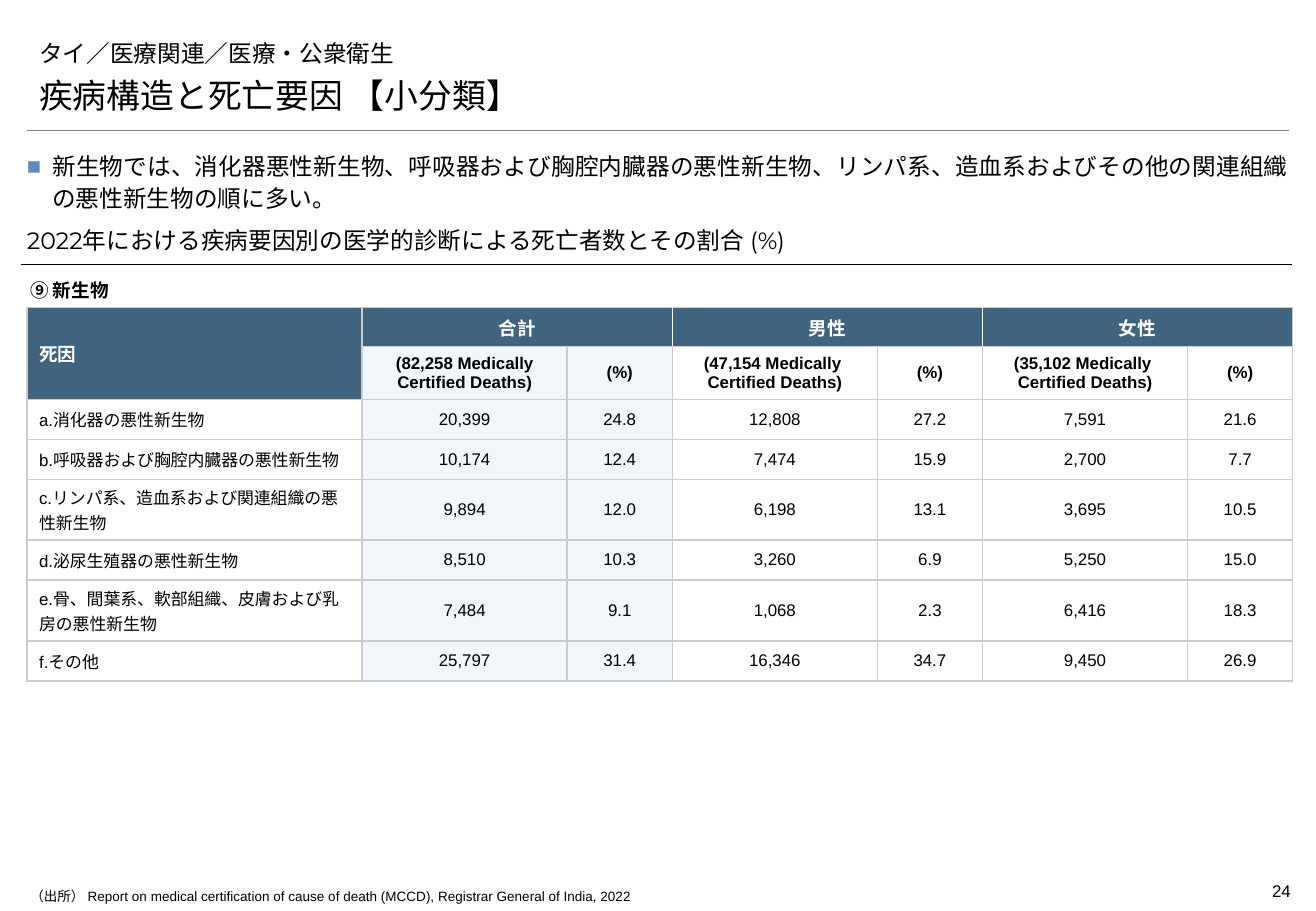
"""Build the slide on neoplasm mortality by cause."""
from dataclasses import dataclass

from lxml import etree
from pptx import Presentation
from pptx import util as u
from pptx.dml.color import RGBColor
from pptx.enum import shapes, text
from pptx.oxml import ns

ALIGN = text.PP_ALIGN
ANCHOR = text.MSO_ANCHOR
INSETS = (7.2, 3.6, 7.2, 3.6)
FLUSH = (0, 0, 0, 0)


@dataclass(frozen=True)
class Theme:
    """Colours, fonts and type sizes of the slide."""
    ink: str = "000000"
    white: str = "FFFFFF"
    rule: str = "7F7F7F"
    grid: str = "CCCCCC"
    header: str = "40647F"
    total: str = "F0F6F9"
    bullet: str = "5F8AC3"
    display: str = "Montserrat"
    plain: str = "Arial"
    heading: float = 20
    lead: float = 14
    label: float = 11
    small: float = 10
    note: float = 8


def sub(parent, tag, **attributes):
    """Append a DrawingML element to its parent."""
    return etree.SubElement(parent, ns.qn(tag), attributes)


class SlideBuilder:
    """Draws styled elements on the current slide."""

    def __init__(self, page, theme):
        """Keep the page and the theme."""
        self.page = page
        self.theme = theme

    def style(self, para, size, font=None, color=None, bold=False, align=ALIGN.LEFT):
        """Format a whole paragraph."""
        para.alignment = align
        para.font.name = font or self.theme.plain
        para.font.size = u.Pt(size)
        para.font.bold = bold
        para.font.color.rgb = RGBColor.from_string(color or self.theme.ink)

    def fill_box(self, box, area, words, size, insets=INSETS, anchor=ANCHOR.TOP, **look):
        """Place a box and write one paragraph in it."""
        box.left, box.top, box.width, box.height = map(u.Pt, area)
        frame = box.text_frame
        frame.word_wrap = True
        frame.auto_size = text.MSO_AUTO_SIZE.NONE
        frame.vertical_anchor = anchor
        (frame.margin_left, frame.margin_top,
         frame.margin_right, frame.margin_bottom) = map(u.Pt, insets)
        para = frame.paragraphs[0]
        para.text = words
        para.space_before = u.Pt(0)
        self.style(para, size, **look)
        return para

    def label(self, area, words, size, **look):
        """Add a text box."""
        box = self.page.shapes.add_textbox(*map(u.Pt, area))
        self.fill_box(box, area, words, size, **look)

    def title(self, area, words):
        """Fill the title placeholder."""
        self.fill_box(self.page.shapes.title, area, words, self.theme.lead,
                      anchor=ANCHOR.BOTTOM, font=self.theme.display)

    def heading(self, area, words):
        """Fill the first body placeholder without a bullet."""
        para = self.fill_box(self.page.placeholders[1], area, words, self.theme.heading,
                             anchor=ANCHOR.BOTTOM, font=self.theme.display)
        properties = para._p.get_or_add_pPr()
        properties.set("marL", "0")
        properties.set("indent", "0")
        properties.append(properties.makeelement(ns.qn("a:buNone")))
        self.style(para, self.theme.heading, font=self.theme.display)

    def bullet(self, area, words, indent):
        """Fill the second body placeholder with a square bullet."""
        para = self.fill_box(self.page.placeholders[2], area, words, self.theme.lead,
                             insets=FLUSH, align=ALIGN.JUSTIFY)
        para.line_spacing = 1.1
        para.space_after = u.Pt(2)
        properties = para._p.get_or_add_pPr()
        properties.set("marL", str(u.Pt(indent)))
        properties.set("indent", str(-u.Pt(indent)))
        defaults = properties.find(ns.qn("a:defRPr"))
        sub(sub(properties, "a:buClr"), "a:srgbClr", val=self.theme.bullet)
        sub(properties, "a:buFont", typeface=self.theme.plain)
        sub(properties, "a:buChar", char="■")
        if defaults is not None:
            properties.append(defaults)

    def rule(self, left, right, top, color, width):
        """Draw a horizontal line."""
        line = self.page.shapes.add_connector(
            shapes.MSO_CONNECTOR.STRAIGHT, *map(u.Pt, (left, top, right, top)))
        line.line.color.rgb = RGBColor.from_string(color)
        line.line.width = u.Pt(width)
        sub(line._element.spPr, "a:effectLst")

    def cell(self, cell, words, size, fill=None, white_sides=(), **look):
        """Write, border and fill one table cell."""
        cell.text = words
        cell.vertical_anchor = ANCHOR.MIDDLE
        for para in cell.text_frame.paragraphs:
            self.style(para, size, **look)
        properties = cell._tc.get_or_add_tcPr()
        for side in "LRTB":
            border = sub(properties, f"a:ln{side}", w=str(u.Pt(1)))
            color = self.theme.white if side in white_sides else self.theme.grid
            sub(sub(border, "a:solidFill"), "a:srgbClr", val=color)
        if fill:
            cell.fill.solid()
            cell.fill.fore_color.rgb = RGBColor.from_string(fill)
        else:
            cell.fill.background()

    def table(self, area, widths, heights, groups, units, causes):
        """Add the table of causes with its two header rows."""
        theme = self.theme
        table = self.page.shapes.add_table(
            len(heights), len(widths), *map(u.Pt, area)).table
        table.first_row = table.horz_banding = False
        for column, width in zip(table.columns, widths):
            column.width = u.Pt(width)
        for row, height in zip(table.rows, heights):
            row.height = u.Pt(height)
        header = dict(size=theme.label, fill=theme.header, color=theme.white, bold=True)
        for row, words in enumerate(("死因", "")):
            self.cell(table.cell(row, 0), words, **header)
        table.cell(0, 0).merge(table.cell(1, 0))
        for index, group in enumerate(groups):
            first = 1 + 2 * index
            for column, words in ((first, group), (first + 1, "")):
                self.cell(table.cell(0, column), words, align=ALIGN.CENTER,
                          white_sides=("R", "LR", "L")[index], **header)
            table.cell(0, first).merge(table.cell(0, first + 1))
        for row, entries in enumerate([("", *units), *causes], start=1):
            for column, words in enumerate(entries):
                if row == 1 and column == 0:
                    continue
                self.cell(table.cell(row, column), words, theme.small,
                          fill=theme.total if column in (1, 2) else None,
                          bold=row == 1,
                          align=ALIGN.CENTER if column else ALIGN.LEFT)


GROUPS = ("合計", "男性", "女性")
UNITS = ("(82,258 Medically Certified Deaths)", "(%)",
         "(47,154 Medically \nCertified Deaths)", "(%)",
         "(35,102 Medically \nCertified Deaths)", "(%)")
CAUSES = (
    ("a.消化器の悪性新生物", "20,399", "24.8", "12,808", "27.2", "7,591", "21.6"),
    ("b.呼吸器および胸腔内臓器の悪性新生物", "10,174", "12.4", "7,474", "15.9", "2,700", "7.7"),
    ("c.リンパ系、造血系および関連組織の悪性新生物", "9,894", "12.0", "6,198", "13.1", "3,695", "10.5"),
    ("d.泌尿生殖器の悪性新生物", "8,510", "10.3", "3,260", "6.9", "5,250", "15.0"),
    ("e.骨、間葉系、軟部組織、皮膚および乳房の悪性新生物", "7,484", "9.1", "1,068", "2.3", "6,416", "18.3"),
    ("f.その他", "25,797", "31.4", "16,346", "34.7", "9,450", "26.9"),
)


def main():
    """Compose the slide and save it."""
    deck = Presentation()
    deck.slide_width, deck.slide_height = u.Pt(780), u.Pt(540)
    theme = Theme()
    slide = SlideBuilder(deck.slides.add_slide(deck.slide_layouts[3]), theme)
    slide.rule(16, 764, 77, theme.rule, 0.25)
    slide.title((16, 18.7, 748, 24.5), "タイ／医療関連／医療・公衆衛生")
    slide.heading((16, 40.3, 748, 31.7), "疾病構造と死亡要因 【小分類】")
    slide.bullet((16, 88.6, 748, 57),
                 "新生物では、消化器悪性新生物、呼吸器および胸腔内臓器の悪性新生物、"
                 "リンパ系、造血系およびその他の関連組織の悪性新生物の順に多い。", 15)
    slide.rule(12.2, 766, 157, theme.ink, 0.75)
    slide.label((16, 134, 750, 22.3),
                "2022年における疾病要因別の医学的診断による死亡者数とその割合 (%)",
                theme.lead, font=theme.display, anchor=ANCHOR.BOTTOM,
                insets=(0, 3.6, 0, 5.8))
    slide.label((10.8, 162, 612, 21), "⑨ 新生物", theme.label, bold=True)
    slide.table((16, 182.2, 750.3, 209.6), [198.6] + [121.6, 62.3] * 3,
                [20, 31.4, 23.7, 23.7, 31.4, 23.7, 31.4, 23.7], GROUPS, UNITS, CAUSES)
    slide.label((18, 526.3, 698, 11.5),
                "（出所） Report on medical certification of cause of death (MCCD), "
                "Registrar General of India, 2022", theme.note, insets=FLUSH)
    slide.label((708, 518.4, 57, 19.4), "24", theme.small,
                insets=(0, 3.6, 0, 3.6), align=ALIGN.RIGHT)
    deck.save("out.pptx")


if __name__ == "__main__":
    main()
